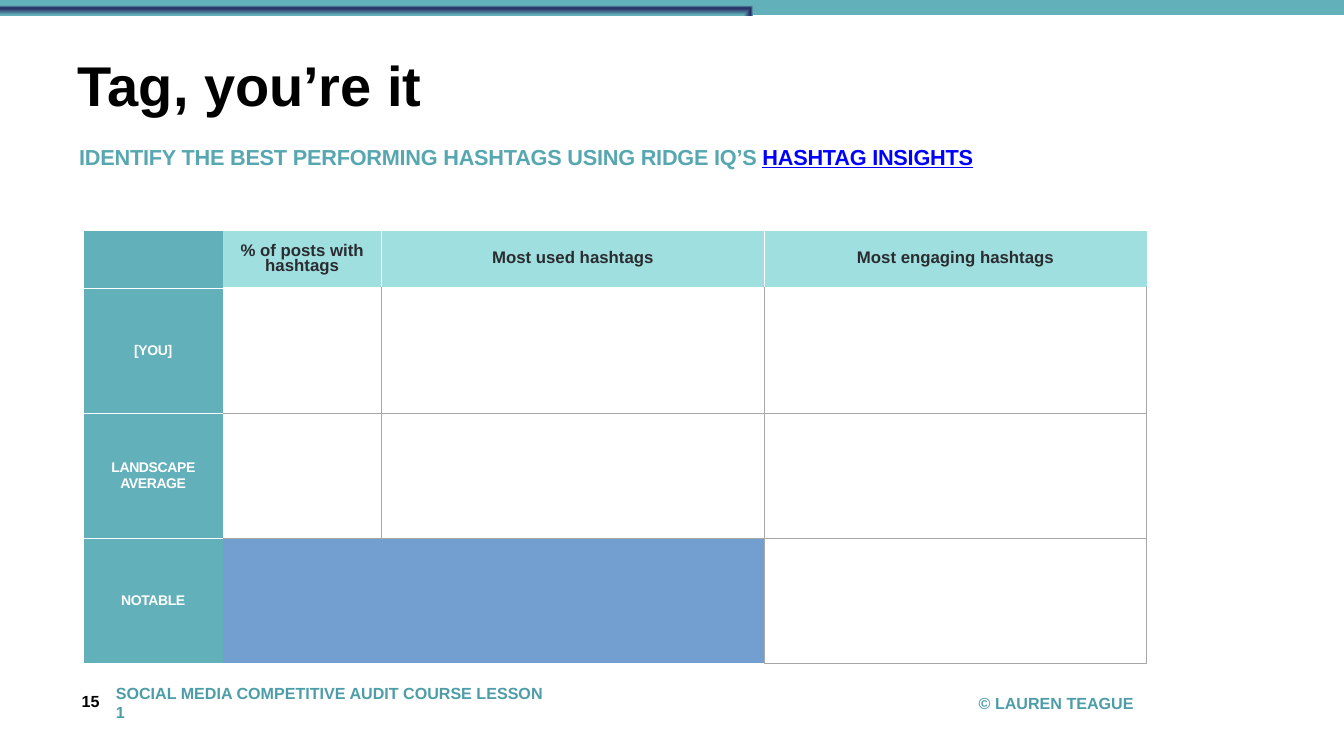
from lxml import etree
from pptx import Presentation
from pptx import util as u
from pptx.dml.color import RGBColor
from pptx.enum import shapes, text
from pptx.oxml import parse_xml
from pptx.oxml.ns import nsdecls, qn

WIDTH, HEIGHT = u.Inches(26.67), u.Inches(15)
FONT = "Arial"
COLORS = {
    "teal": "62B0BA", "navy": "252A62", "indigo": "2B386B", "aqua": "A0DFE0",
    "subtitle": "57A7B1", "footer": "4D9DA8", "link": "0000FF", "ink": "2A2C2F",
    "grid": "A7A7A7", "blue": "729FCF", "white": "FFFFFF", "black": "000000",
}
HEADERS = ["% of posts with hashtags", "Most used hashtags", "Most engaging hashtags"]
LABELS = ["[YOU]", "LANDSCAPE AVERAGE", "NOTABLE"]
COLUMN_SHARES = [1.14, 1.62, 3.15, 7.59, 7.59]
ROW_SHARES = [1.13, 2.48, 2.48, 2.48]


def box(left, top, width, height):
    """Turn percentages of the slide into lengths."""
    return [round(share * side / 100)
            for share, side in zip((left, top, width, height), (WIDTH, HEIGHT) * 2)]


def color(name):
    return RGBColor.from_string(COLORS[name])


def set_font(target, size, name):
    font = target.font
    font.name, font.size, font.bold = FONT, u.Pt(size), True
    font.color.rgb = color(name)


def set_frame(frame, inset, anchor=text.MSO_ANCHOR.TOP):
    frame.word_wrap = True
    frame.auto_size = text.MSO_AUTO_SIZE.NONE
    frame.vertical_anchor = anchor
    frame.margin_left = frame.margin_right = u.Inches(inset)
    frame.margin_top = frame.margin_bottom = u.Inches(inset)


def place(shape, area):
    shape.left, shape.top, shape.width, shape.height = area


def add_top_bar(slide, area):
    bar = slide.shapes.add_shape(shapes.MSO_SHAPE.RECTANGLE, *area)
    bar.shadow.inherit = False
    bar.line.fill.background()
    stops = [(0, "teal"), (62, "indigo"), (74, "navy"), (100, "teal")]
    stop_xml = "".join(f'<a:gs pos="{position * 1000}"><a:srgbClr val="{COLORS[name]}"/></a:gs>'
                       for position, name in stops)
    bar.element.spPr.insert(2, parse_xml(
        f'<a:gradFill {nsdecls("a")} rotWithShape="1"><a:gsLst>{stop_xml}</a:gsLst>'
        '<a:path path="shape"><a:fillToRect l="6000" t="99000" r="94000" b="1000"/></a:path>'
        '</a:gradFill>'))


def fill_title(title, area):
    place(title, area)
    set_frame(title.text_frame, 0.05)
    paragraph = title.text_frame.paragraphs[0]
    paragraph.text = "Tag, you’re it"
    paragraph.alignment = text.PP_ALIGN.LEFT
    paragraph.line_spacing = 0.8
    set_font(paragraph, 80, "black")


def fill_subtitle(subtitle, area):
    place(subtitle, area)
    set_frame(subtitle.text_frame, 0.08)
    paragraph = subtitle.text_frame.paragraphs[0]
    paragraph.alignment = text.PP_ALIGN.LEFT
    paragraph.line_spacing = 1.1
    paragraph.space_before = u.Pt(0)
    parts = [("IDENTIFY THE BEST PERFORMING HASHTAGS USING RIDGE IQ’S ", "subtitle"),
             ("HASHTAG INSIGHTS", "link")]
    for wording, name in parts:
        run = paragraph.add_run()
        run.text = wording
        set_font(run, 31, name)
        run.font.underline = name == "link"
        run.font._element.set("spc", "-30")


def add_footer_text(slide, area, wording, name, anchor=text.MSO_ANCHOR.MIDDLE):
    frame = slide.shapes.add_textbox(*area).text_frame
    set_frame(frame, 0.08, anchor)
    frame.paragraphs[0].text = wording
    set_font(frame.paragraphs[0], 23, name)


def set_borders(cell, **sides):
    """Draw each side (L, R, T, B) given as (colour, points); hide the others."""
    properties = cell._tc.get_or_add_tcPr()
    for side in "LRTB":
        name, points = sides.get(side, (None, 0))
        line = etree.SubElement(properties, qn(f"a:ln{side}"), w=str(u.Pt(points)))
        if name:
            fill = etree.SubElement(line, qn("a:solidFill"))
            etree.SubElement(fill, qn("a:srgbClr"), val=COLORS[name])
        else:
            etree.SubElement(line, qn("a:noFill"))


def fill_cell(cell, fill, wording="", size=24, name="ink", spacing=0.8):
    cell.fill.solid()
    cell.fill.fore_color.rgb = color(fill)
    cell.vertical_anchor = text.MSO_ANCHOR.MIDDLE
    cell.margin_left = cell.margin_right = u.Inches(0.06)
    cell.margin_top = cell.margin_bottom = u.Inches(0.06)
    if wording:
        paragraph = cell.text_frame.paragraphs[0]
        run = paragraph.add_run()
        run.text = wording
        paragraph.alignment = text.PP_ALIGN.CENTER
        paragraph.line_spacing = spacing
        set_font(paragraph, size, name)
        if name == "white":
            run.font._element.set("spc", "-60")


def add_hashtag_table(slide, area):
    rows, columns = len(ROW_SHARES), len(COLUMN_SHARES)
    table = slide.shapes.add_table(rows, columns, *area).table
    table.first_row = table.horz_banding = False
    for column, share in zip(table.columns, COLUMN_SHARES):
        column.width = round(area[2] * share / sum(COLUMN_SHARES))
    for row, share in zip(table.rows, ROW_SHARES):
        row.height = round(area[3] * share / sum(ROW_SHARES))

    white, thick, grey = ("white", 1), ("white", 4), ("grid", 1)
    for index, label in enumerate([""] + LABELS):
        cell = table.cell(index, 0)
        cell.merge(table.cell(index, 1))
        edges = {"T": white} if index else {}
        if index < rows - 1:
            edges["B"] = white
        set_borders(cell, **edges)
        fill_cell(cell, "teal", label, 20, "white", 1.0)

    for column, header in enumerate(HEADERS, start=2):
        last = column == columns - 1
        edges = {"B": thick} if last else {"R": white, "B": thick}
        if column > 2:
            edges["L"] = white
        set_borders(table.cell(0, column), **edges)
        fill_cell(table.cell(0, column), "aqua", header)
        for row in range(1, rows):
            unused = row == rows - 1 and column == 2
            edges = {"R": grey, "T": thick if row == 1 else grey}
            if column > 2:
                edges["L"] = grey
            if not unused:
                edges["B"] = grey
            set_borders(table.cell(row, column), **edges)
            fill_cell(table.cell(row, column), "blue" if unused else "white")


def main():
    presentation = Presentation()
    presentation.slide_width, presentation.slide_height = WIDTH, HEIGHT
    slide = presentation.slides.add_slide(presentation.slide_layouts[0])
    add_top_bar(slide, box(-0.34, -0.53, 100.68, 2.53))
    fill_title(slide.shapes.title, box(5.59, 8.13, 90.89, 11.07))
    fill_subtitle(slide.placeholders[1], box(5.59, 18.13, 90.89, 5.87))
    add_hashtag_table(slide, box(6.22, 30.53, 79.1, 57.2))
    add_footer_text(slide, box(5.77, 90.93, 2.14, 3.47), "15", "black", text.MSO_ANCHOR.TOP)
    add_footer_text(slide, box(8.32, 91.2, 33.41, 3.47),
                    "SOCIAL MEDIA COMPETITIVE AUDIT COURSE LESSON 1", "footer")
    add_footer_text(slide, box(72.52, 91.2, 12.49, 3.47), "© LAUREN TEAGUE", "footer")
    presentation.save("out.pptx")


if __name__ == "__main__":
    main()
